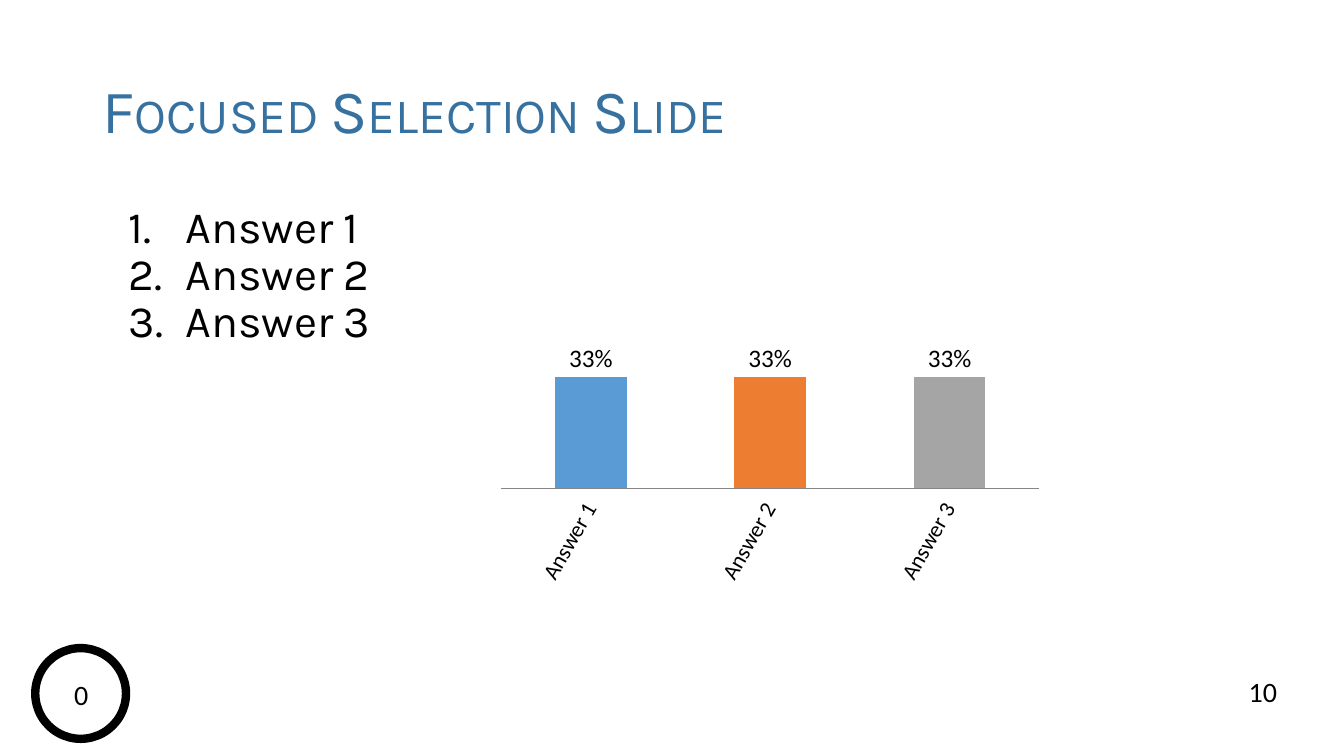
from dataclasses import dataclass

from lxml.etree import SubElement
from pptx import Presentation
from pptx.chart.data import CategoryChartData
from pptx.dml.color import RGBColor
from pptx.enum.chart import XL_CHART_TYPE, XL_LABEL_POSITION, XL_TICK_LABEL_POSITION, XL_TICK_MARK
from pptx.enum.shapes import MSO_SHAPE
from pptx.enum.text import MSO_ANCHOR, PP_ALIGN
from pptx.oxml.ns import qn
from pptx.util import Inches, Pt


@dataclass(frozen=True)
class Theme:
    """Colours, fonts and type sizes of the slide."""
    ink: str = "000000"
    blue: str = "3671A0"
    axis: str = "868686"
    bars: tuple = ("5B9BD5", "ED7D31", "A5A5A5")
    head: str = "Karla"
    body: str = "Calibri"
    title: int = 44
    answer: int = 32
    count: int = 20
    value: int = 18
    tick: int = 16


THEME = Theme()
ANSWERS = ["Answer 1", "Answer 2", "Answer 3"]


def style(font, name, size, color):
    """Set the face, size and colour of a font."""
    font.name = name
    font.size = Pt(size)
    font.color.rgb = RGBColor.from_string(color)


def frame(slide, box):
    """Add a wrapping text box and return its frame."""
    text = slide.shapes.add_textbox(*map(Inches, box)).text_frame
    text.word_wrap = True
    return text


def write(para, words, name, size, color):
    """Add one styled run to a paragraph."""
    run = para.add_run()
    run.text = words
    style(run.font, name, size, color)
    return run


def add_title(slide, box, words):
    """Place the title in small capitals."""
    text = frame(slide, box)
    text.vertical_anchor = MSO_ANCHOR.MIDDLE
    para = text.paragraphs[0]
    para.line_spacing = 0.9
    run = write(para, words, THEME.head, THEME.title, THEME.blue)
    run.font._element.set("cap", "small")


def add_answers(slide, box, answers):
    """Place the numbered list of answers."""
    text = frame(slide, box)
    indent = Inches(0.56)
    for i, answer in enumerate(answers):
        para = text.add_paragraph() if i else text.paragraphs[0]
        props = para._p.get_or_add_pPr()
        props.set("marL", str(indent))
        props.set("indent", str(-indent))
        SubElement(props, qn("a:buFont"), typeface="+mj-lt")
        SubElement(props, qn("a:buAutoNum"), type="arabicPeriod")
        para.line_spacing = 0.85
        if i:
            para.space_before = Pt(1)
        write(para, answer, THEME.head, THEME.answer, THEME.ink)


def fix_plot(chart):
    """Pin the inner plot area as shares of the chart."""
    area = chart._chartSpace.chart.plotArea
    for old in area.findall(qn("c:layout")):
        area.remove(old)
    layout = SubElement(area, qn("c:layout"))
    area.insert(0, layout)
    manual = SubElement(layout, qn("c:manualLayout"))
    parts = {"layoutTarget": "inner", "xMode": "edge", "yMode": "edge",
             "x": 0.02, "y": 0.02, "w": 0.96, "h": 0.755}
    for tag, val in parts.items():
        SubElement(manual, qn(f"c:{tag}"), val=str(val))


def add_votes(slide, box, answers, share):
    """Place the column chart of votes for each answer."""
    data = CategoryChartData(number_format="0%")
    data.categories = answers
    data.add_series("Series 1", [share] * len(answers))
    chart = slide.shapes.add_chart(
        XL_CHART_TYPE.COLUMN_CLUSTERED, *map(Inches, box), data).chart
    chart.has_legend = chart.has_title = False
    style(chart.font, THEME.body, THEME.value, THEME.ink)
    fix_plot(chart)

    scale = chart.value_axis
    scale.minimum_scale, scale.maximum_scale = 0, 1
    scale.has_major_gridlines = False
    scale.visible = False

    names = chart.category_axis
    names.major_tick_mark = XL_TICK_MARK.NONE
    names.tick_label_position = XL_TICK_LABEL_POSITION.LOW
    names.format.line.color.rgb = RGBColor.from_string(THEME.axis)
    style(names.tick_labels.font, THEME.body, THEME.tick, THEME.ink)
    names._element.find(qn("c:txPr")).find(qn("a:bodyPr")).set("rot", "-3600000")

    plot = chart.plots[0]
    plot.gap_width = 150
    plot.vary_by_categories = False
    plot.has_data_labels = True
    labels = plot.data_labels
    labels.show_value = True
    labels.number_format = "0%"
    labels.number_format_is_linked = False
    labels.position = XL_LABEL_POSITION.OUTSIDE_END
    style(labels.font, THEME.body, THEME.value, THEME.ink)
    for i, color in enumerate(THEME.bars):
        fill = plot.series[0].points[i].format.fill
        fill.solid()
        fill.fore_color.rgb = RGBColor.from_string(color)


def add_count(slide, box, words):
    """Place a short centred number."""
    para = frame(slide, box).paragraphs[0]
    para.alignment = PP_ALIGN.CENTER
    write(para, words, THEME.body, THEME.count, THEME.ink)


def add_tally(slide, box, words):
    """Place the ring with the response count inside."""
    left, top, _, _ = box
    ring = slide.shapes.add_shape(MSO_SHAPE.OVAL, *map(Inches, box))
    ring.shadow.inherit = False
    ring.fill.background()
    ring.line.color.rgb = RGBColor.from_string(THEME.ink)
    ring.line.width = Pt(6)
    add_count(slide, (left + 0.04, top + 0.24, 0.83, 0.44), words)


def main():
    """Build the slide and save it."""
    deck = Presentation()
    deck.slide_width, deck.slide_height = Inches(13.33), Inches(7.5)
    slide = deck.slides.add_slide(deck.slide_layouts[6])
    add_votes(slide, (4.86, 1.42, 5.56, 4.42), ANSWERS, 0.33)
    add_title(slide, (0.92, 0.4, 11.5, 1.45), "Focused Selection Slide")
    add_answers(slide, (1.18, 2, 4.5, 1.48), ANSWERS)
    add_count(slide, (12.11, 6.64, 0.83, 0.44), "10")
    add_tally(slide, (0.35, 6.43, 0.9, 0.9), "0")
    deck.save("out.pptx")


if __name__ == "__main__":
    main()
